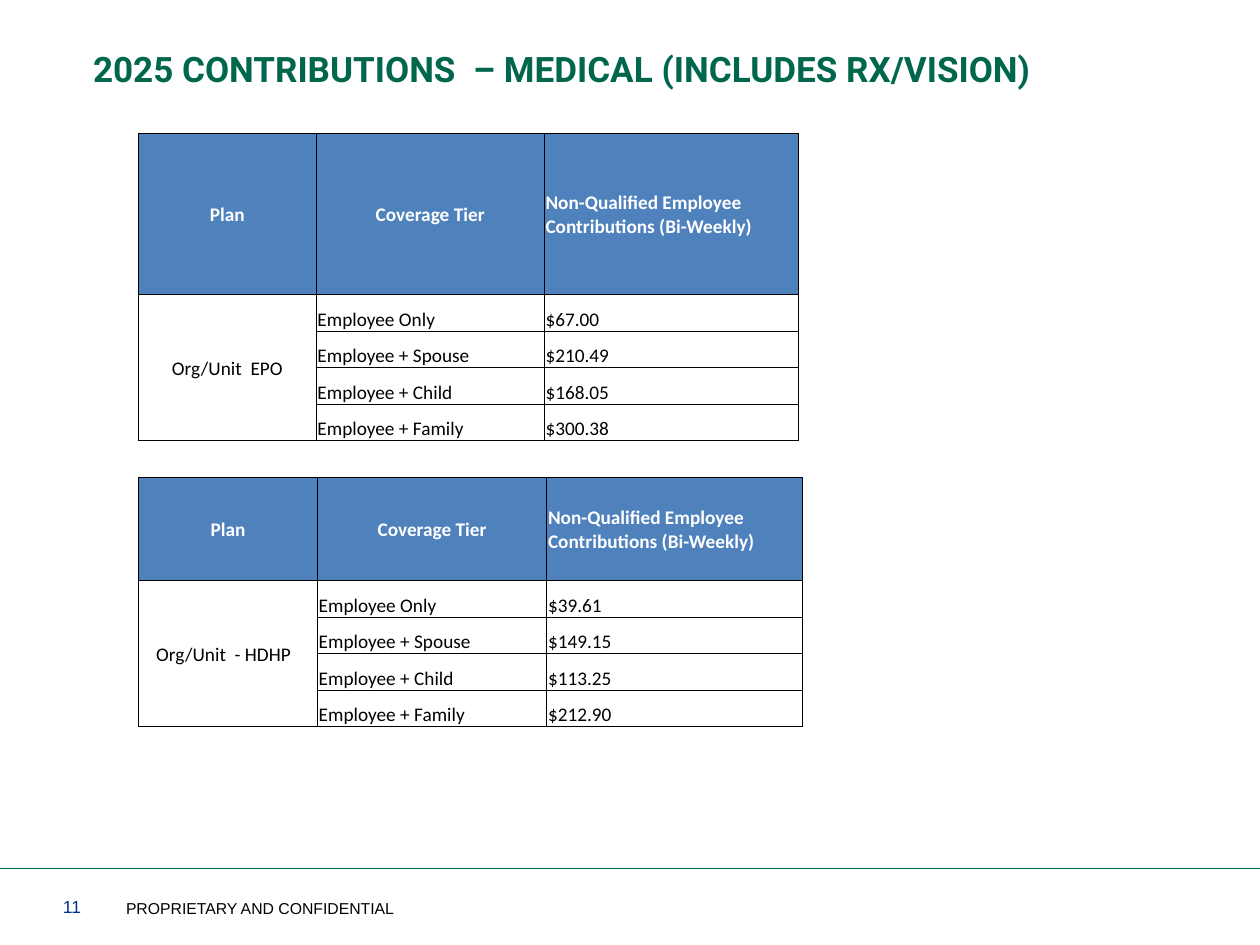
from lxml import etree
from pptx import Presentation
from pptx import util as u
from pptx.dml.color import RGBColor
from pptx.enum import shapes, text
from pptx.oxml import ns

GREEN = RGBColor(0x00, 0x66, 0x4D)
NAVY = RGBColor(0x00, 0x30, 0x87)
BLUE = RGBColor(0x4F, 0x81, 0xBD)
BLACK = RGBColor(0, 0, 0)
WHITE = RGBColor(255, 255, 255)

deck = Presentation()
deck.slide_width, deck.slide_height = u.Inches(10), u.Inches(7.5)
page = deck.slides.add_slide(deck.slide_layouts[6])

# Grid of 100 columns by 75 rows
COL = deck.slide_width / 100
ROW = deck.slide_height / 75


def add_run(para, words, font, size, color, bold=False):
    for number, line in enumerate(words.split("\n")):
        if number:
            para.add_line_break()
        span = para.add_run()
        span.text = line
        span.font.name, span.font.size, span.font.bold = font, u.Pt(size), bold
        span.font.color.rgb = color


def add_borders(cell):
    properties = cell._tc.get_or_add_tcPr()
    for side in ("lnL", "lnR", "lnT", "lnB"):
        line = etree.SubElement(properties, ns.qn(f"a:{side}"), w=str(u.Pt(0.5)))
        fill = etree.SubElement(line, ns.qn("a:solidFill"))
        etree.SubElement(fill, ns.qn("a:srgbClr"), val=str(BLACK))


# Footer rule
rule = page.shapes.add_connector(
    shapes.MSO_CONNECTOR.STRAIGHT, 0, int(68.9 * ROW), deck.slide_width, int(68.9 * ROW))
rule.line.color.rgb = GREEN
rule.line.width = u.Pt(0.5)
etree.SubElement(rule._element.spPr, ns.qn("a:effectLst"))

# Footer texts and title
LABELS = [
    (5, 70.8, 5.4, 2.5, "11", "Arial", 10, NAVY),
    (10, 70.8, 23.5, 2.5, "PROPRIETARY AND CONFIDENTIAL", "Arial", 9, BLACK),
    (6.4, 3.3, 90.3, 4.4, "2025 CONTRIBUTIONS  – MEDICAL (INCLUDES RX/VISION)",
     "Roboto", 20, GREEN),
]
for left, top, width, height, words, font, size, color in LABELS:
    is_title = font == "Roboto"
    box = page.shapes.add_textbox(
        int(left * COL), int(top * ROW), int(width * COL), int(height * ROW))
    frame = box.text_frame
    frame.word_wrap = True
    if is_title:
        frame.auto_size = text.MSO_AUTO_SIZE.SHAPE_TO_FIT_TEXT
    else:
        frame.margin_left = frame.margin_right = 0
        frame.vertical_anchor = text.MSO_ANCHOR.BOTTOM
    add_run(frame.paragraphs[0], words, font, size, color, is_title)

# Contribution tables: top, header height, column widths, plan, its right inset, rates
HEADERS = ["Plan", "Coverage Tier", "Non-Qualified Employee\nContributions (Bi-Weekly)"]
TIERS = ["Employee Only", "Employee + Spouse", "Employee + Child", "Employee + Family"]
TIER_HEIGHT = 2.9
PLANS = [
    (10.6, 12.8, (14.1, 18.1, 20.2), "Org/Unit  EPO", 0.01,
     ["$67.00", "$210.49", "$168.05", "$300.38"]),
    (37.9, 8.2, (14.2, 18.2, 20.3), "Org/Unit  - HDHP", 0.08,
     ["$39.61", "$149.15", "$113.25", "$212.90"]),
]
for top, header_height, widths, plan, plan_inset, rates in PLANS:
    heights = [header_height] + [TIER_HEIGHT] * len(TIERS)
    rows = [HEADERS] + [[plan if not i else "", tier, rate]
                        for i, (tier, rate) in enumerate(zip(TIERS, rates))]
    table = page.shapes.add_table(
        len(rows), len(widths), int(11 * COL), int(top * ROW),
        int(sum(widths) * COL), int(sum(heights) * ROW)).table
    table.first_row = table.horz_banding = False
    for column, width in zip(table.columns, widths):
        column.width = int(width * COL)
    for r, (row, height) in enumerate(zip(rows, heights)):
        table.rows[r].height = int(height * ROW)
        for c, words in enumerate(row):
            cell = table.cell(r, c)
            is_header = r == 0
            add_borders(cell)
            if not is_header and c == 2:
                cell.fill.background()
            else:
                cell.fill.solid()
                cell.fill.fore_color.rgb = BLUE if is_header else WHITE
            cell.margin_left = cell.margin_right = cell.margin_top = u.Inches(0.01)
            cell.margin_bottom = 0
            cell.vertical_anchor = (text.MSO_ANCHOR.MIDDLE if is_header or c == 0
                                    else text.MSO_ANCHOR.BOTTOM)
            para = cell.text_frame.paragraphs[0]
            centred = c == 0 or (is_header and c == 1)
            para.alignment = text.PP_ALIGN.CENTER if centred else text.PP_ALIGN.LEFT
            if words:
                add_run(para, words, "Calibri", 11, WHITE if is_header else BLACK, is_header)
    table.cell(1, 0).margin_right = u.Inches(plan_inset)
    table.cell(1, 0).merge(table.cell(len(TIERS), 0))

deck.save("out.pptx")
